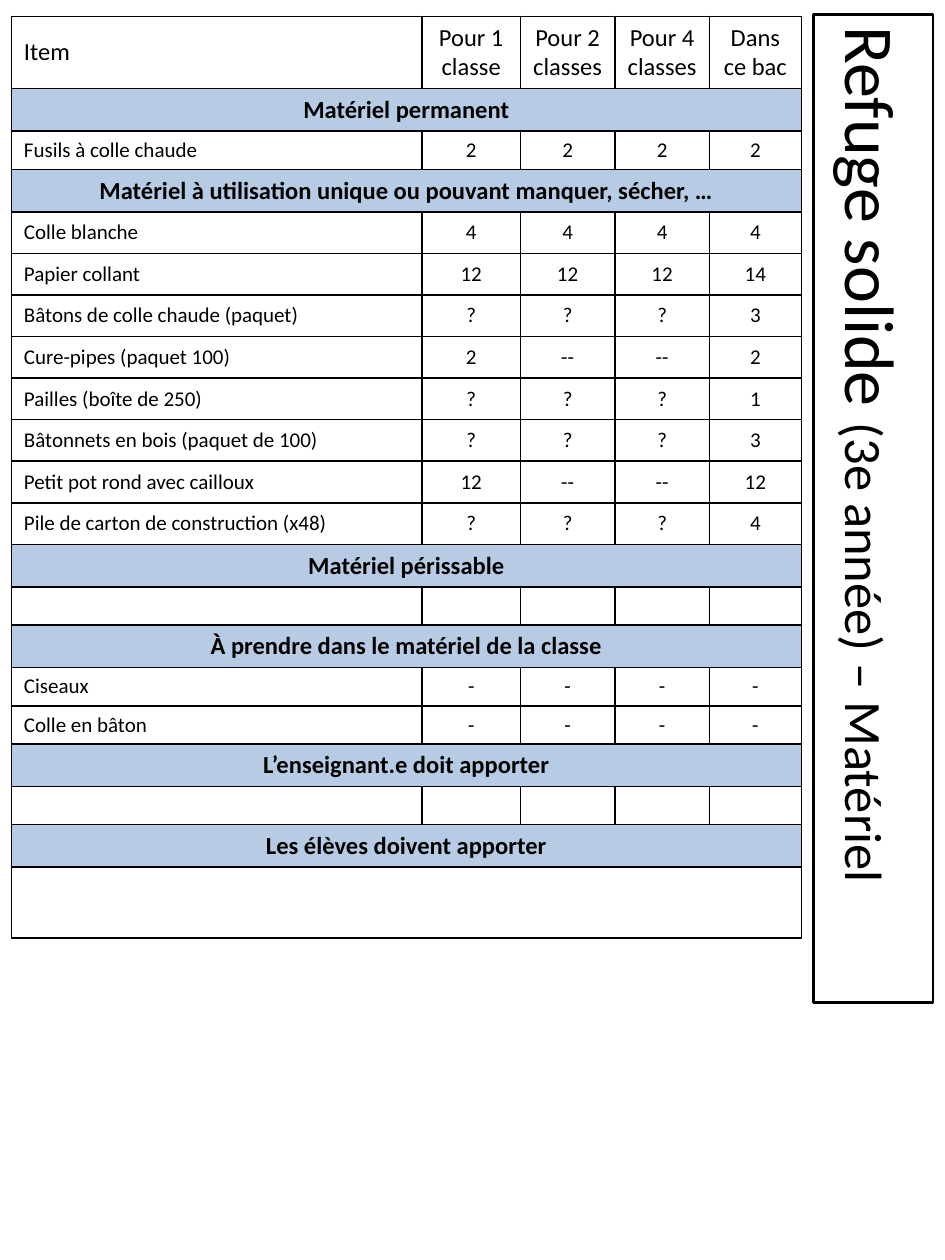
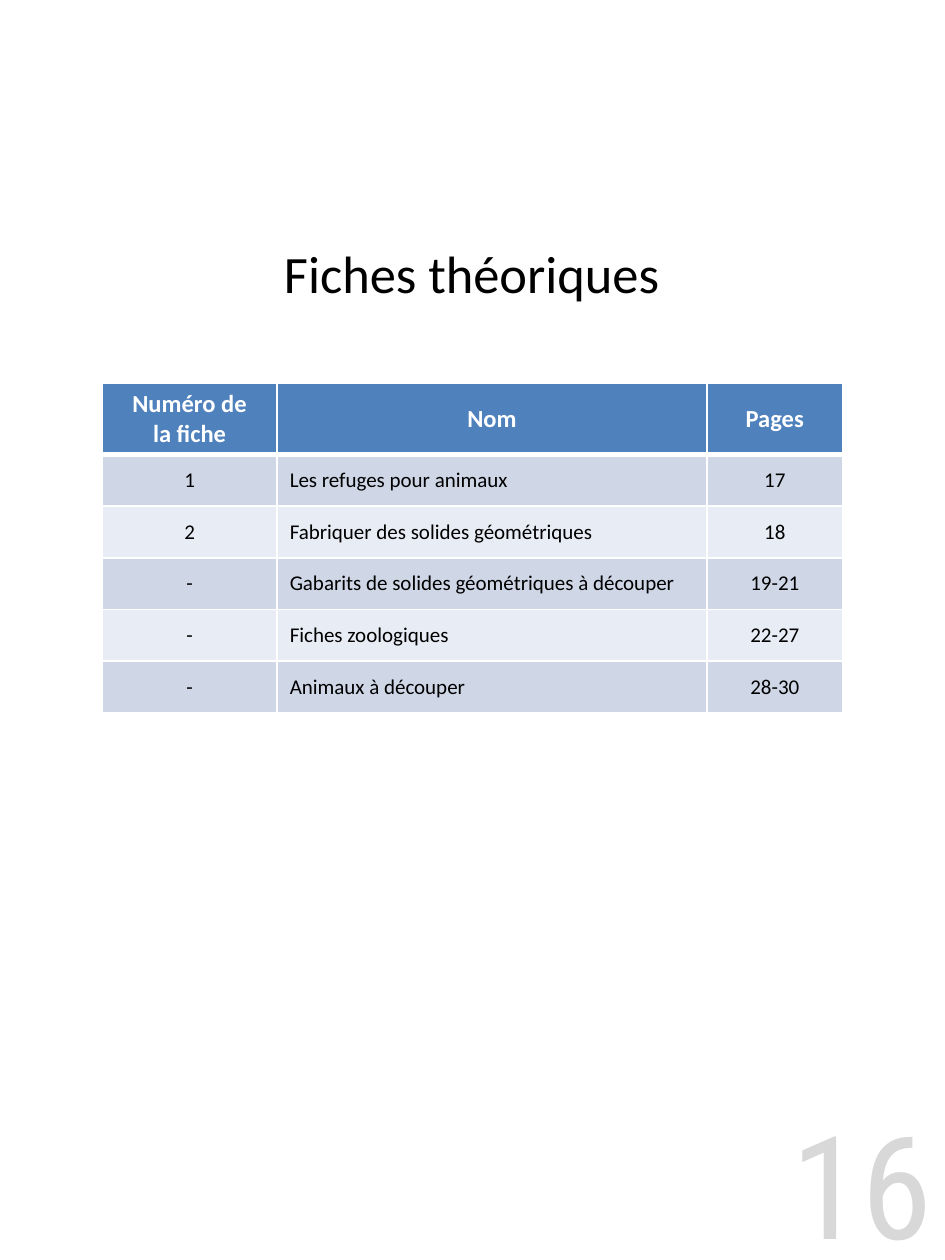
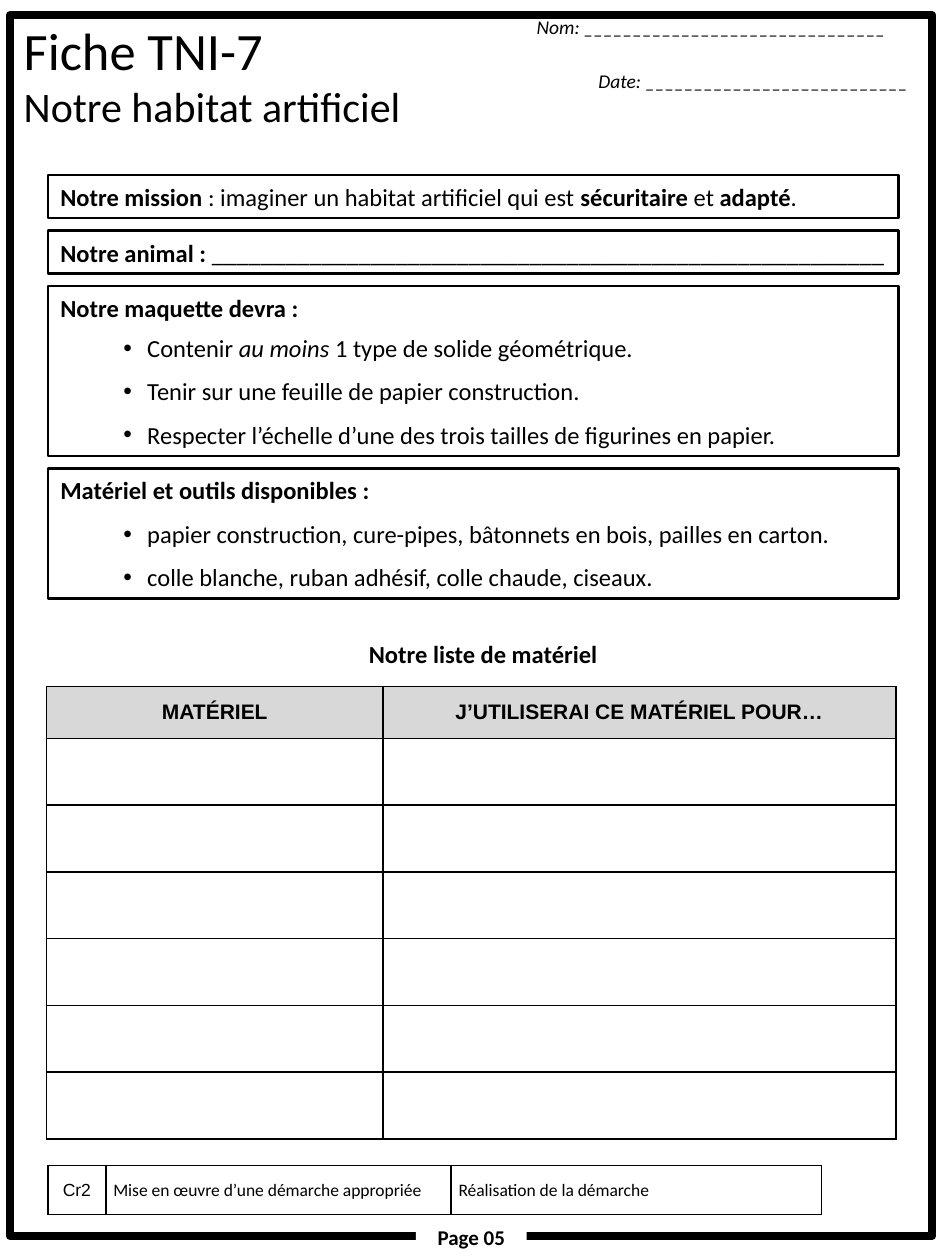
"""Builds a material list, a contents page and a pupil worksheet."""
import pptx
import pptx.dml.color
import pptx.enum.shapes
import pptx.enum.text
import pptx.oxml
import pptx.oxml.ns
import pptx.util

Inches = pptx.util.Inches
Pt = pptx.util.Pt
ALIGN = pptx.enum.text.PP_ALIGN
ANCHOR = pptx.enum.text.MSO_ANCHOR

FONT = "Calibri"
BLACK, WHITE, GREY = "000000", "FFFFFF", "D8D8D8"
BAND_BLUE, HEADER_BLUE = "B7CCE4", "4F81BD"
ROW_TINTS = ("CFD7E7", "E8ECF4")

SUPPLY_TITLE = [("Refuge solide ", 40), ("(3e année) – Matériel", 30)]
SUPPLY_COLUMNS = [3.26, 0.78, 0.75, 0.75, 0.73]
SUPPLY_HEADER = ["Item", "Pour 1 classe", "Pour 2 classes", "Pour 4 classes", "Dans ce bac"]
SUPPLY_SECTIONS = [
    ("Matériel permanent", 0.3, [["Fusils à colle chaude", "2", "2", "2", "2"]]),
    ("Matériel à utilisation unique ou pouvant manquer, sécher, …", 0.33, [
        ["Colle blanche", "4", "4", "4", "4"],
        ["Papier collant", "12", "12", "12", "14"],
        ["Bâtons de colle chaude (paquet)", "?", "?", "?", "3"],
        ["Cure-pipes (paquet 100)", "2", "--", "--", "2"],
        ["Pailles (boîte de 250)", "?", "?", "?", "1"],
        ["Bâtonnets en bois (paquet de 100)", "?", "?", "?", "3"],
        ["Petit pot rond avec cailloux", "12", "--", "--", "12"],
        ["Pile de carton de construction (x48)", "?", "?", "?", "4"],
    ]),
    ("Matériel périssable", 0.3, [[""] * 5]),
    ("À prendre dans le matériel de la classe", 0.3, [
        ["Ciseaux", "-", "-", "-", "-"],
        ["Colle en bâton", "-", "-", "-", "-"],
    ]),
    ("L’enseignant.e doit apporter", 0.3, [[""] * 5]),
    ("Les élèves doivent apporter", 0.56, [[""]]),
]

SHEET_COLUMNS = [1.39, 3.41, 1.08]
SHEET_HEADER = ["Numéro de\nla fiche", "Nom", "Pages"]
SHEETS = [
    ["1", "Les refuges pour animaux", "17"],
    ["2", "Fabriquer des solides géométriques", "18"],
    ["-", "Gabarits de solides géométriques à découper", "19-21"],
    ["-", "Fiches zoologiques", "22-27"],
    ["-", "Animaux à découper", "28-30"],
]

WORKSHEET_TITLE = [("Fiche TNI-7", 30), ("Notre habitat artificiel", 24)]
PUPIL_FIELDS = [("Nom: " + "_" * 31, 0.04), ("Date: " + "_" * 27, 0.53)]
BRIEF_BOXES = [
    (0.34, [("Notre mission ", "b"), (": imaginer un habitat artificiel qui est ", ""),
            ("sécuritaire", "b"), (" et ", ""), ("adapté", "b"), (".", "")], []),
    (0.34, [("Notre animal : ", "b"), ("_" * 55, "")], []),
    (1.35, [("Notre maquette devra :", "b")], [
        (6, [("Contenir ", ""), ("au moins ", "i"), ("1 type de solide géométrique.", "")]),
        (8, [("Tenir sur une feuille de papier construction.", "")]),
        (8, [("Respecter l’échelle d’une des trois tailles de figurines en papier.", "")]),
    ]),
    (1.03, [("Matériel et outils disponibles :", "b")], [
        (8, [("papier construction, cure-pipes, bâtonnets en bois, pailles en carton.", "")]),
        (8, [("colle blanche, ruban adhésif, colle chaude, ciseaux.", "")]),
    ]),
]
BRIEF_TOP, BRIEF_GAP = 1.39, 0.1
PLAN_HEADER = ["MATÉRIEL", "J’UTILISERAI CE MATÉRIEL POUR…"]
PLAN_EMPTY_ROWS = 6
CRITERION = ["Cr2", "Mise en œuvre d’une démarche appropriée", "Réalisation de la démarche"]


def color(value):
    return pptx.dml.color.RGBColor.from_string(value)


def set_font(font, size, bold=False, tint=BLACK, name=FONT, italic=False):
    font.name, font.size, font.bold, font.italic = name, Pt(size), bold, italic
    font.color.rgb = color(tint)


def set_frame(frame, anchor=ANCHOR.MIDDLE):
    frame.word_wrap = True
    frame.vertical_anchor = anchor


def add_box(slide, left, top, width, height, fill=None, line=None, weight=1.5):
    box = slide.shapes.add_shape(pptx.enum.shapes.MSO_SHAPE.RECTANGLE, Inches(left),
                                 Inches(top), Inches(width), Inches(height))
    box.shadow.inherit = False
    if fill:
        box.fill.solid()
        box.fill.fore_color.rgb = color(fill)
    else:
        box.fill.background()
    if line:
        box.line.color.rgb = color(line)
        box.line.width = Pt(weight)
    else:
        box.line.fill.background()
    set_frame(box.text_frame)
    return box


def add_text(slide, left, top, width, height, lines, align=ALIGN.LEFT, **style):
    box = slide.shapes.add_textbox(Inches(left), Inches(top), Inches(width), Inches(height))
    set_frame(box.text_frame)
    for index, (text, size) in enumerate(lines):
        paragraph = next_paragraph(box.text_frame, index)
        paragraph.text, paragraph.alignment = text, align
        set_font(paragraph.font, size, **style)
    return box


def next_paragraph(frame, index):
    return frame.add_paragraph() if index else frame.paragraphs[0]


def set_indent(paragraph, left, hanging=0.0, bullet=None):
    properties = paragraph._p.get_or_add_pPr()
    properties.set("marL", str(Inches(left)))
    properties.set("indent", str(Inches(-hanging)))
    if bullet:
        namespace = pptx.oxml.ns.nsdecls("a")
        properties.append(pptx.oxml.parse_xml(f'<a:buFont {namespace} typeface="Arial"/>'))
        properties.append(pptx.oxml.parse_xml(f'<a:buChar {namespace} char="{bullet}"/>'))


def add_runs(paragraph, runs, size):
    paragraph.font.size = Pt(size)
    for text, style in runs:
        run = paragraph.add_run()
        run.text = text
        set_font(run.font, size, bold=style == "b", italic=style == "i")


def add_table(slide, left, top, columns, heights):
    table = slide.shapes.add_table(len(heights), len(columns), Inches(left), Inches(top),
                                   Inches(sum(columns)), Inches(sum(heights))).table
    table.first_row = table.horz_banding = False
    for column, width in zip(table.columns, columns):
        column.width = Inches(width)
    for row, height in zip(table.rows, heights):
        row.height = Inches(height)
    return table


def fill_cell(cell, text, size, align=ALIGN.CENTER, fill=None, border=BLACK, weights=None, **style):
    cell.vertical_anchor = ANCHOR.MIDDLE
    properties = cell._tc.get_or_add_tcPr()
    for side in "LRTB":
        width = Pt((weights or {}).get(side, 1))
        properties.append(pptx.oxml.parse_xml(
            f'<a:ln{side} {pptx.oxml.ns.nsdecls("a")} w="{width}"><a:solidFill>'
            f'<a:srgbClr val="{border}"/></a:solidFill></a:ln{side}>'))
    if fill:
        cell.fill.solid()
        cell.fill.fore_color.rgb = color(fill)
    else:
        cell.fill.background()
    for index, line in enumerate(text.split("\n")):
        paragraph = next_paragraph(cell.text_frame, index)
        paragraph.text, paragraph.alignment = line, align
        set_font(paragraph.font, size, **style)


def column_align(column, left_column):
    return ALIGN.LEFT if column == left_column else ALIGN.CENTER


def build_supplies(slide):
    title = add_box(slide, 3.01, 3.56, 7.84, 0.95, line=BLACK)
    title.rotation = 90
    paragraph = title.text_frame.paragraphs[0]
    paragraph.alignment = ALIGN.LEFT
    for text, size in SUPPLY_TITLE:
        run = paragraph.add_run()
        run.text = text
        set_font(run.font, size)

    rows = [(SUPPLY_HEADER, 0.57, 14)]
    for heading, height, items in SUPPLY_SECTIONS:
        rows.append(([heading], 0.33, 14))
        rows += [(item, height, 12) for item in items]
    table = add_table(slide, 0.09, 0.13, SUPPLY_COLUMNS, [height for _, height, _ in rows])
    last_column = len(SUPPLY_COLUMNS) - 1
    for index, (texts, _, size) in enumerate(rows):
        spans = len(texts) == 1
        heading = spans and texts[0] != ""
        if spans:
            table.cell(index, 0).merge(table.cell(index, last_column))
        for column in range(last_column + 1):
            text = texts[column] if column < len(texts) else ""
            align = ALIGN.CENTER if spans else column_align(column, 0)
            fill_cell(table.cell(index, column), text, size, align,
                      BAND_BLUE if heading else None, bold=heading)


def build_contents(slide):
    add_text(slide, 5.79, 8.76, 1.71, 1.24, [("16", 82)], ALIGN.RIGHT,
             tint=GREY, name="Roboto Condensed")
    table = add_table(slide, 0.81, 3.04, SHEET_COLUMNS, [0.56] + [0.41] * len(SHEETS))
    for column, text in enumerate(SHEET_HEADER):
        fill_cell(table.cell(0, column), text, 14, fill=HEADER_BLUE, border=WHITE,
                  weights={"B": 3}, bold=True, tint=WHITE)
    for index, sheet in enumerate(SHEETS):
        for column, text in enumerate(sheet):
            fill_cell(table.cell(index + 1, column), text, 12, column_align(column, 1),
                      ROW_TINTS[index % 2], WHITE, {"T": 1 if index else 3})
    add_text(slide, 1.41, 1.69, 4.67, 0.95, [("Fiches théoriques", 30)], ALIGN.CENTER)


def build_worksheet(slide):
    add_box(slide, 0.08, 0.12, 7.32, 9.69, line=BLACK, weight=4.5)
    add_text(slide, 0.09, 0.11, 4.07, 0.96, WORKSHEET_TITLE)
    fields = add_text(slide, 4.12, 0.11, 3.22, 0.98,
                      [(text, 11.1) for text, _ in PUPIL_FIELDS], italic=True)
    fields.text_frame.vertical_anchor = ANCHOR.TOP
    for index, (paragraph, field) in enumerate(zip(fields.text_frame.paragraphs, PUPIL_FIELDS)):
        set_indent(paragraph, field[1])
        paragraph.line_spacing = 0.8
        if index:
            paragraph.space_before = Pt(20)

    page = add_box(slide, 3.3, 9.65, 0.88, 0.34, fill=WHITE)
    paragraph = page.text_frame.paragraphs[0]
    paragraph.text, paragraph.alignment = "Page 05", ALIGN.CENTER
    set_font(paragraph.font, 12, bold=True)

    top = BRIEF_TOP
    for height, heading, bullets in BRIEF_BOXES:
        frame = add_box(slide, 0.38, top, 6.75, height, line=BLACK).text_frame
        frame.vertical_anchor = ANCHOR.MIDDLE if bullets else ANCHOR.BOTTOM
        frame.paragraphs[0].alignment = ALIGN.LEFT
        add_runs(frame.paragraphs[0], heading, 14)
        for space, runs in bullets:
            paragraph = frame.add_paragraph()
            set_indent(paragraph, 0.69, 0.19, "•")
            paragraph.level, paragraph.alignment = 1, ALIGN.JUSTIFY
            paragraph.space_before = Pt(space)
            add_runs(paragraph, runs, 14)
        top += height + BRIEF_GAP

    add_text(slide, 0.46, 5.02, 6.75, 0.34, [("Notre liste de matériel", 14)],
             ALIGN.CENTER, bold=True)
    plan = add_table(slide, 0.37, 5.45, [2.67, 4.07], [0.41] + [0.53] * PLAN_EMPTY_ROWS)
    for row in range(PLAN_EMPTY_ROWS + 1):
        for column, text in enumerate(PLAN_HEADER):
            fill_cell(plan.cell(row, column), "" if row else text, 12,
                      fill=None if row else GREY, bold=not row, name="Arial")

    criterion = add_table(slide, 0.38, 9.25, [0.46, 2.74, 2.94], [0.39])
    for column, text in enumerate(CRITERION):
        cell = criterion.cell(0, column)
        fill_cell(cell, text, 10, ALIGN.LEFT if column else ALIGN.CENTER,
                  name=FONT if column else "Arial")
        cell.margin_left = cell.margin_right = Inches(0.06)
        cell.margin_top = cell.margin_bottom = 0


def main():
    presentation = pptx.Presentation()
    presentation.slide_width, presentation.slide_height = Inches(7.5), Inches(10)
    for build in (build_supplies, build_contents, build_worksheet):
        build(presentation.slides.add_slide(presentation.slide_layouts[6]))
    presentation.save("out.pptx")


if __name__ == "__main__":
    main()
